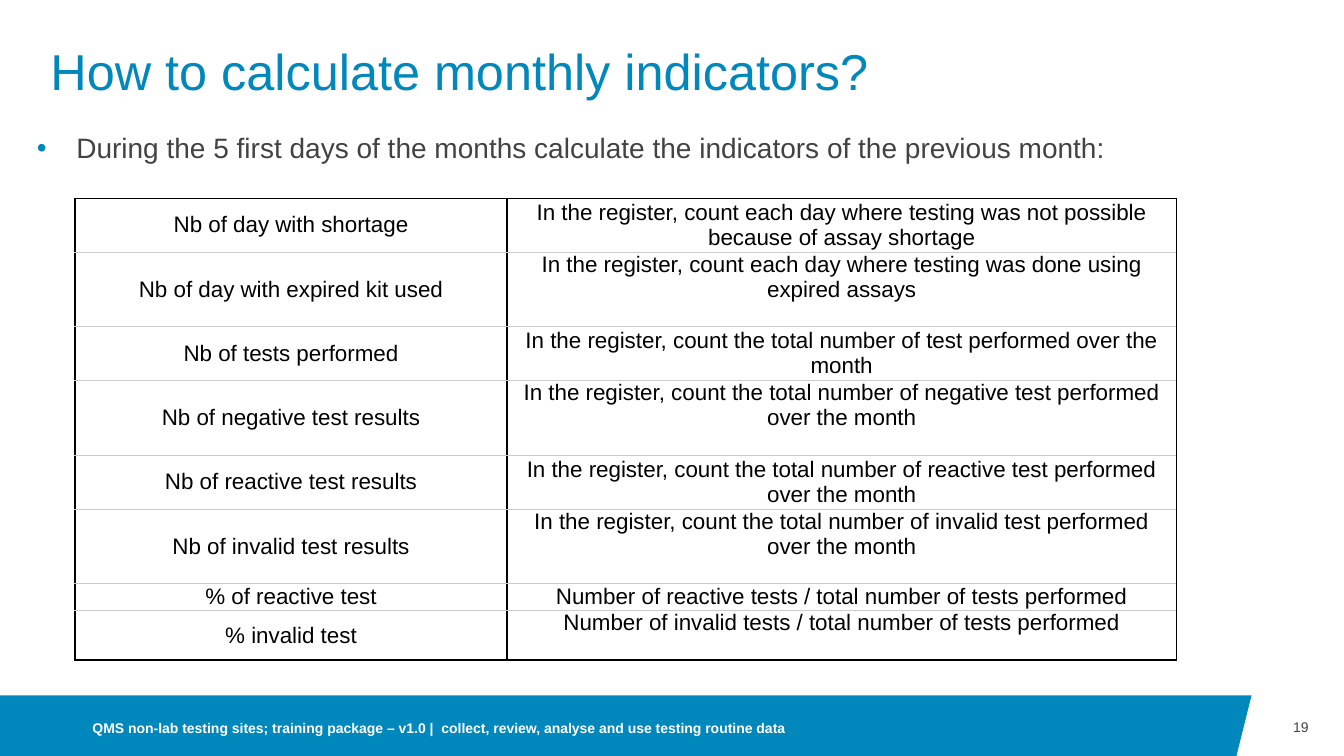
from lxml.etree import SubElement
from pptx import Presentation
from pptx.dml.color import RGBColor
from pptx.enum.text import MSO_ANCHOR as Anchor, PP_ALIGN as Align
from pptx.oxml.ns import qn
from pptx.util import Inches, Pt

COLORS = {
    "blue": "0087BC",
    "gray": "424242",
    "white": "FFFFFF",
    "black": "000000",
    "rule": "CCCCCC",
}

INDICATORS = [
    ("Nb of day with shortage",
     "In the register, count each day where testing was not possible because of assay shortage"),
    ("Nb of day with expired kit used",
     "In the register, count each day where testing was done using expired assays"),
    ("Nb of tests performed",
     "In the register, count the total number of test performed over the month"),
    ("Nb of negative test results",
     "In the register, count the total number of negative test performed over the month"),
    ("Nb of reactive test results",
     "In the register, count the total number of reactive test performed over the month"),
    ("Nb of invalid test results",
     "In the register, count the total number of invalid test performed over the month"),
    ("% of reactive test",
     "Number of reactive tests / total number of tests performed"),
    ("% invalid test",
     "Number of invalid tests / total number of tests performed"),
]
INDICATOR_ROWS = [6, 8.9, 6, 8.9, 6, 8.9, 3, 5.9]


class Page:
    font = "Arial"
    columns = 160
    rows = 90

    def __init__(self, deck):
        self.width, self.height = deck.slide_width, deck.slide_height
        self.slide = deck.slides.add_slide(deck.slide_layouts[6])

    def across(self, columns):
        return round(self.width * columns / self.columns)

    def down(self, rows):
        return round(self.height * rows / self.rows)

    def area(self, left, top, width, height):
        return self.across(left), self.down(top), self.across(width), self.down(height)

    def style_text(self, frame, text, size, color, bold=False, align=Align.LEFT):
        frame.text = text
        frame.word_wrap = True
        para = frame.paragraphs[0]
        para.alignment = align
        font = para.runs[0].font
        font.name, font.size, font.bold = self.font, Pt(size), bold
        font.color.rgb = RGBColor.from_string(COLORS[color])
        return para

    def text(self, area, text, size, color, anchor=Anchor.MIDDLE, inset=(0, 0), **style):
        frame = self.slide.shapes.add_textbox(*self.area(*area)).text_frame
        frame.vertical_anchor = anchor
        frame.margin_left = frame.margin_right = Inches(inset[0])
        frame.margin_top = frame.margin_bottom = Inches(inset[1])
        return self.style_text(frame, text, size, color, **style)

    def bullet(self, area, text, size, color, bullet_color):
        para = self.text(area, text, size, color, Anchor.TOP, (0.1, 0.05))
        properties = para._p.get_or_add_pPr()
        properties.set("marL", str(Inches(0.5)))
        properties.set("indent", str(Inches(-0.39)))
        tint = SubElement(properties, qn("a:buClr"))
        SubElement(tint, qn("a:srgbClr"), val=COLORS[bullet_color])
        SubElement(properties, qn("a:buFont"), typeface=self.font)
        SubElement(properties, qn("a:buChar"), char="•")

    def band(self, corners, color):
        points = [(self.across(column), self.down(row)) for column, row in corners]
        builder = self.slide.shapes.build_freeform(*points[0])
        builder.add_line_segments(points[1:], close=True)
        shape = builder.convert_to_shape()
        shape.shadow.inherit = False
        shape.fill.solid()
        shape.fill.fore_color.rgb = RGBColor.from_string(COLORS[color])
        shape.line.fill.background()

    def border(self, cell, side, color, weight):
        line = SubElement(cell._tc.get_or_add_tcPr(), qn(f"a:ln{side}"), w=str(Pt(weight)))
        fill = SubElement(line, qn("a:solidFill"))
        SubElement(fill, qn("a:srgbClr"), val=COLORS[color])

    def table(self, left, top, widths, heights, content, size):
        area = self.area(left, top, sum(widths), sum(heights))
        table = self.slide.shapes.add_table(len(heights), len(widths), *area).table
        table.first_row = table.horz_banding = False
        for column, width in zip(table.columns, widths):
            column.width = self.across(width)
        last = len(heights) - 1
        for index, (texts, height) in enumerate(zip(content, heights)):
            table.rows[index].height = self.down(height)
            for side, text in enumerate(texts):
                cell = table.cell(index, side)
                cell.margin_left = cell.margin_right = Inches(0.03)
                cell.margin_top = cell.margin_bottom = 0
                raised = side == 1 and index % 2 == 1
                cell.vertical_anchor = Anchor.TOP if raised else Anchor.MIDDLE
                self.style_text(cell.text_frame, text, size, "black", align=Align.CENTER)
                self.border(cell, "L", "black", 1.5)
                self.border(cell, "R", "black", 0.75 if side else 1.5)
                self.border(cell, "T", "rule" if index else "black", 0.75)
                self.border(cell, "B", *(("black", 1.5) if index == last else ("rule", 0.75)))
                cell.fill.background()


def main():
    deck = Presentation()
    deck.slide_width, deck.slide_height = Inches(13.33), Inches(7.5)
    page = Page(deck)
    page.band([(0, 82.8), (149, 82.8), (147.2, 90), (0, 90)], "blue")
    title = page.text((6, 2.6, 138, 12.4), "How to calculate monthly indicators?", 36, "blue")
    title.line_spacing = 0.9
    page.bullet(
        (1.9, 15, 138, 6),
        "During the 5 first days of the months calculate the indicators of the previous month:",
        20, "gray", "blue")
    page.text(
        (11, 83.4, 96, 6.6),
        "QMS non-lab testing sites; training package – v1.0 |  collect, review, analyse and use testing routine data",
        10, "white", bold=True)
    page.text((149, 82.8, 6.8, 7.5), "19", 10, "gray", align=Align.RIGHT)
    page.table(8.9, 23.6, [51.5, 79.6], INDICATOR_ROWS, INDICATORS, 16)
    deck.save("out.pptx")


if __name__ == "__main__":
    main()
